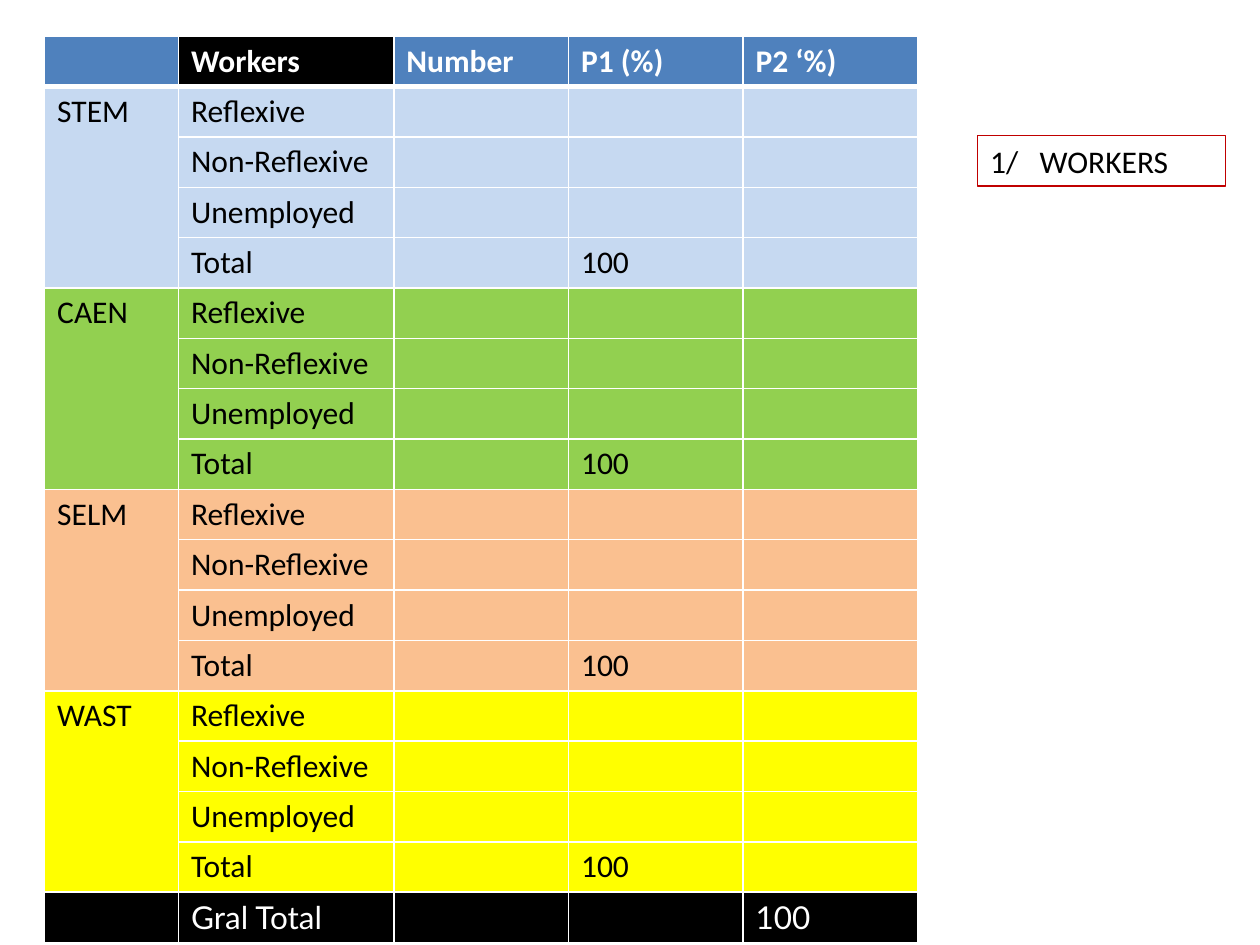
from lxml.etree import SubElement
from pptx import Presentation
from pptx.dml.color import RGBColor
from pptx.enum.shapes import MSO_SHAPE
from pptx.enum.text import MSO_ANCHOR, PP_ALIGN
from pptx.oxml import parse_xml
from pptx.oxml.ns import nsdecls, qn
from pptx.util import Cm, Pt

WHITE = RGBColor(0xFF, 0xFF, 0xFF)
BLACK = RGBColor(0, 0, 0)
BLUE = RGBColor(0x4F, 0x81, 0xBD)
PALE = RGBColor(0xC6, 0xD9, 0xF1)
GREEN = RGBColor(0x92, 0xD0, 0x50)
PEACH = RGBColor(0xFA, 0xC0, 0x90)
YELLOW = RGBColor(0xFF, 0xFF, 0)
RED = RGBColor(0xC0, 0, 0)

HEADS = ["", "Workers", "Number", "P1 (%)", "P2 ‘%)"]
GROUPS = [("STEM", PALE), ("CAEN", GREEN), ("SELM", PEACH), ("WAST", YELLOW)]
KINDS = ["Reflexive", "Non-Reflexive", "Unemployed", "Total"]
WIDTHS = [2.7, 4.34, 3.52, 3.52, 3.52]
HEIGHT = 18.28


def write(frame, text, font="Calibri", size=18, color=BLACK, bold=False):
    para = frame.paragraphs[0]
    para.alignment = PP_ALIGN.LEFT
    run = para.add_run()
    run.text = text
    run.font.name = font
    run.font.size = Pt(size)
    run.font.bold = bold
    run.font.color.rgb = color
    return para


def edge(cell, top=1, low=1):
    """Give the cell white borders; top and low are widths in points."""
    props = cell._tc.get_or_add_tcPr()
    sides = [("L", 1), ("R", 1), ("T", top), ("B", low)]
    for spot, (side, width) in enumerate(sides):
        props.insert(spot, parse_xml(
            f'<a:ln{side} {nsdecls("a")} w="{Pt(width)}"><a:solidFill>'
            f'<a:srgbClr val="{WHITE}"/></a:solidFill></a:ln{side}>'))


def fill_row(table, row, texts, fills, top=1, low=1, **form):
    for col, (text, fill) in enumerate(zip(texts, fills)):
        cell = table.cell(row, col)
        cell.margin_top = Cm(0.12)
        cell.margin_bottom = Cm(0.08)
        cell.fill.solid()
        cell.fill.fore_color.rgb = fill
        edge(cell, top, low)
        if text:
            write(cell.text_frame, text, **form)


def add_grid(slide):
    count = len(GROUPS) * len(KINDS) + 2
    table = slide.shapes.add_table(
        count, len(WIDTHS), Cm(0.9), Cm(0.73),
        Cm(sum(WIDTHS)), Cm(HEIGHT)).table
    for col, width in zip(table.columns, WIDTHS):
        col.width = Cm(width)
    for row in table.rows:
        row.height = Cm(HEIGHT / count)

    fill_row(table, 0, HEADS, [BLUE, BLACK, BLUE, BLUE, BLUE],
             low=3, color=WHITE, bold=True)
    row = 1
    for name, fill in GROUPS:
        first = row
        for kind in KINDS:
            share = "100" if kind == "Total" else ""
            label = name if row == first else ""
            fill_row(table, row, [label, kind, "", share, ""], [fill] * 5,
                     top=3 if row == 1 else 1)
            row += 1
        table.cell(first, 0).merge(table.cell(row - 1, 0))
    fill_row(table, row, ["", "Gral Total", "", "", "100"], [BLACK] * 5,
             font="Lato", color=WHITE)


def add_label(slide):
    box = slide.shapes.add_shape(
        MSO_SHAPE.RECTANGLE, Cm(19.71), Cm(2.73), Cm(5), Cm(1.02))
    box.shadow.inherit = False
    box.fill.background()
    box.line.color.rgb = RED
    box.line.width = Pt(0.75)
    box.text_frame.word_wrap = True
    box.text_frame.vertical_anchor = MSO_ANCHOR.TOP
    para = write(box.text_frame, "1/\tWORKERS")
    tabs = SubElement(para._p.get_or_add_pPr(), qn("a:tabLst"))
    SubElement(tabs, qn("a:tab"), pos=str(Cm(1)), algn="l")


def main():
    deck = Presentation()
    deck.slide_width = Cm(25.4)
    deck.slide_height = Cm(19.05)
    slide = deck.slides.add_slide(deck.slide_layouts[6])
    add_grid(slide)
    add_label(slide)
    deck.save("out.pptx")


if __name__ == "__main__":
    main()
